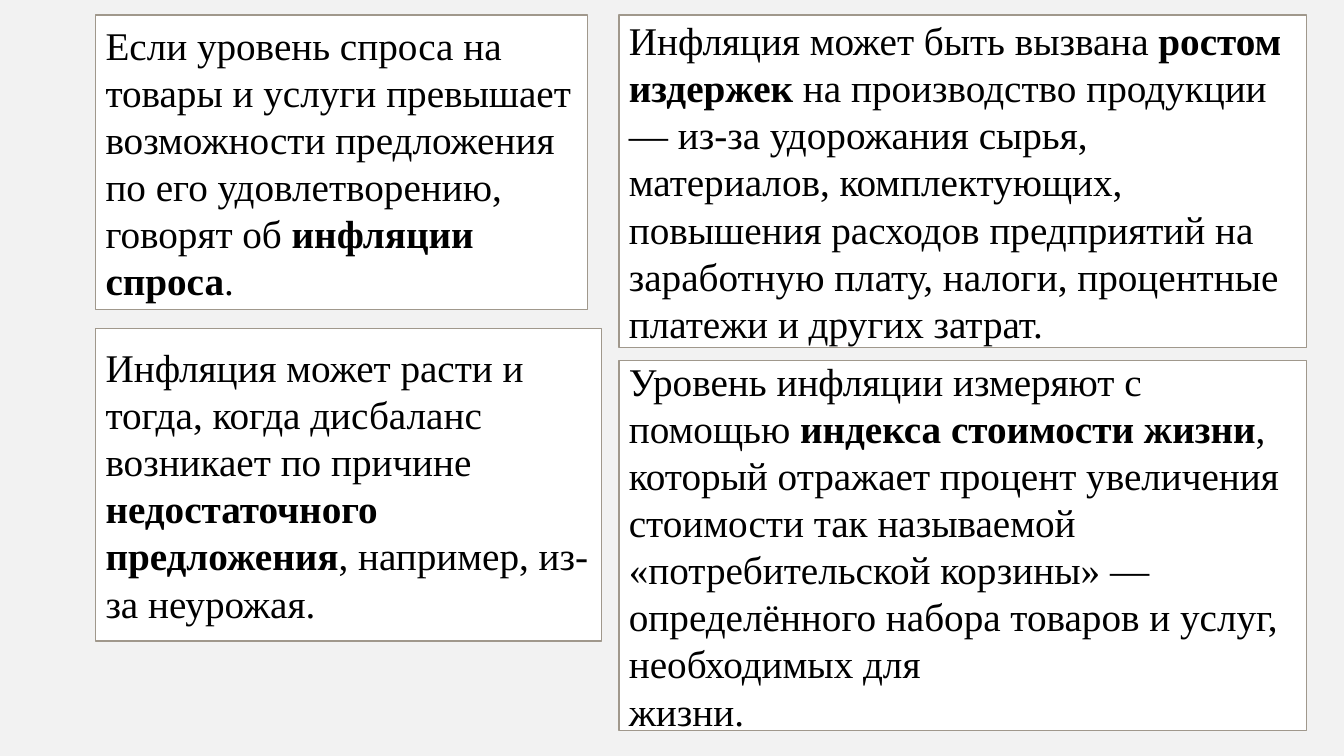
from dataclasses import dataclass

import pptx
import pptx.dml.color
import pptx.enum.shapes
import pptx.enum.text
import pptx.util
from pptx.util import Cm


@dataclass(frozen=True)
class Theme:
    background: str = "F2F2F2"
    card: str = "FFFFFF"
    border: str = "A0988C"
    text: str = "000000"
    font: str = "Times New Roman"
    text_size: int = 28
    border_width: int = 1


@dataclass(frozen=True)
class Card:
    width: float
    height: float
    paragraphs: list


THEME = Theme()

DEMAND = Card(12.4, 7.42, [[
    ("Если уровень спроса на товары и услуги превышает возможности предложения "
     "по его удовлетворению, говорят об ", False),
    ("инфляции спроса", True),
    (".", False),
]])
SUPPLY = Card(12.75, 7.87, [[
    ("Инфляция может расти и тогда, когда дисбаланс возникает по причине ", False),
    ("недостаточного предложения", True),
    (", например, из-за неурожая.", False),
]])
COSTS = Card(17.32, 8.38, [[
    ("Инфляция может быть вызвана ", False),
    ("ростом издержек ", True),
    ("на производство продукции — из-за удорожания сырья, материалов, "
     "комплектующих, повышения расходов предприятий на заработную плату, "
     "налоги, процентные платежи и других затрат.", False),
]])
INDEX = Card(17.32, 9.32, [
    [
        ("Уровень инфляции измеряют с помощью ", False),
        ("индекса стоимости жизни", True),
        (", который отражает процент увеличения стоимости так называемой "
         "«потребительской корзины» — определённого набора товаров и услуг, "
         "необходимых для", False),
    ],
    [("жизни.", False)],
])


def color(value):
    return pptx.dml.color.RGBColor.from_string(value)


def add_text(frame, paragraphs):
    frame.word_wrap = True
    frame.vertical_anchor = pptx.enum.text.MSO_ANCHOR.MIDDLE
    for index, runs in enumerate(paragraphs):
        paragraph = frame.add_paragraph() if index else frame.paragraphs[0]
        paragraph.alignment = pptx.enum.text.PP_ALIGN.LEFT
        for text, bold in runs:
            run = paragraph.add_run()
            run.text = text
            run.font.name = THEME.font
            run.font.size = pptx.util.Pt(THEME.text_size)
            run.font.bold = bold
            run.font.color.rgb = color(THEME.text)


def add_card(slide, left, top, card):
    shape = slide.shapes.add_shape(
        pptx.enum.shapes.MSO_SHAPE.RECTANGLE,
        left, top, Cm(card.width), Cm(card.height))
    shape.shadow.inherit = False
    shape.fill.solid()
    shape.fill.fore_color.rgb = color(THEME.card)
    shape.line.color.rgb = color(THEME.border)
    shape.line.width = pptx.util.Pt(THEME.border_width)
    add_text(shape.text_frame, card.paragraphs)


def add_column(slide, left, top, gap, cards):
    for card in cards:
        add_card(slide, left, top, card)
        top += Cm(card.height) + gap


def add_inflation_slide(presentation):
    slide = presentation.slides.add_slide(presentation.slide_layouts[6])
    slide.background.fill.solid()
    slide.background.fill.fore_color.rgb = color(THEME.background)
    top = Cm(0.38)
    add_column(slide, Cm(2.41), top, Cm(0.48), [DEMAND, SUPPLY])
    add_column(slide, Cm(15.6), top, Cm(0.33), [COSTS, INDEX])


def main():
    presentation = pptx.Presentation()
    presentation.slide_width = Cm(33.87)
    presentation.slide_height = Cm(19.05)
    add_inflation_slide(presentation)
    presentation.save("out.pptx")


if __name__ == "__main__":
    main()
